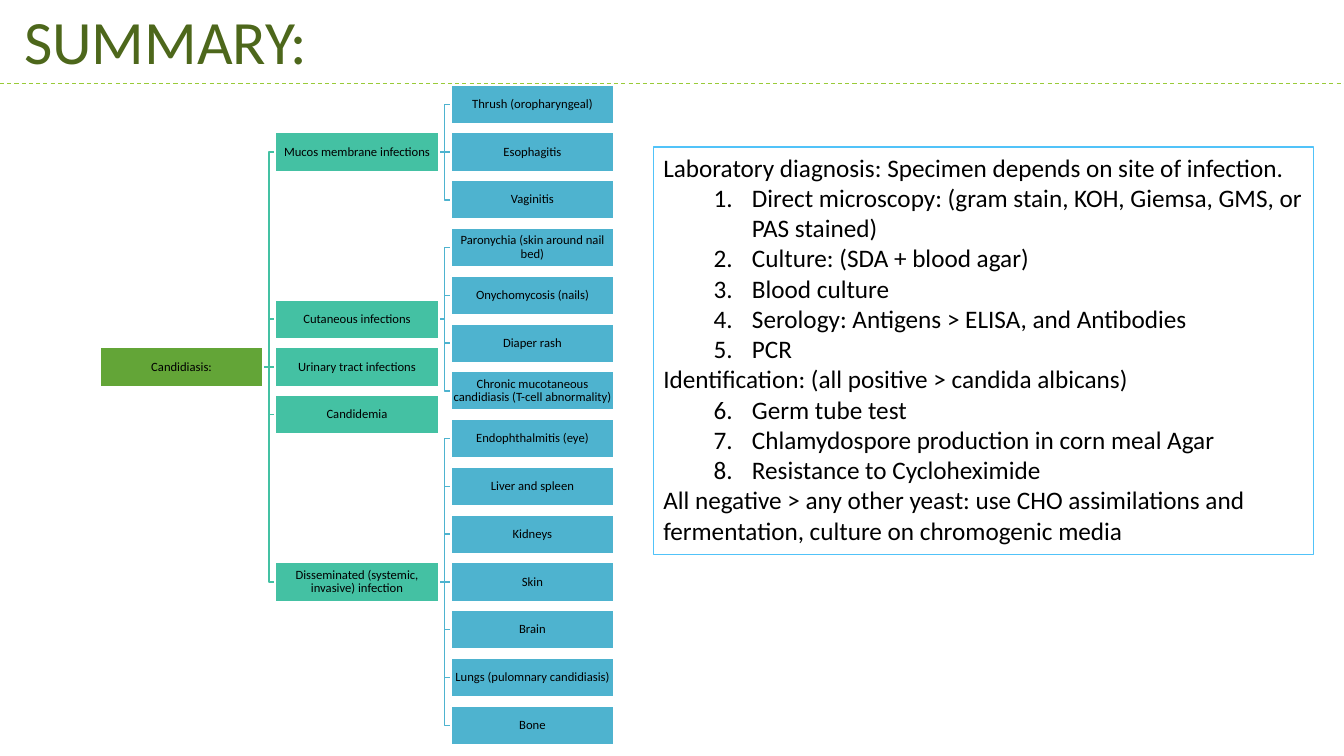
from lxml.etree import SubElement
from pptx import Presentation
from pptx.dml.color import RGBColor
from pptx.enum.dml import MSO_LINE
from pptx.enum.shapes import MSO_CONNECTOR as Connector, MSO_SHAPE as Shape
from pptx.enum.text import MSO_ANCHOR as Anchor, MSO_AUTO_SIZE as AutoSize, PP_ALIGN as Align
from pptx.oxml.ns import qn
from pptx.util import Inches, Pt

BLACK = RGBColor(0x00, 0x00, 0x00)
WHITE = RGBColor(0xFF, 0xFF, 0xFF)
DARK_GREEN = RGBColor(0x4D, 0x67, 0x1B)
LIME = RGBColor(0x99, 0xCB, 0x38)
GREEN = RGBColor(0x63, 0xA5, 0x37)
TEAL = RGBColor(0x44, 0xC1, 0xA3)
BLUE = RGBColor(0x4E, 0xB3, 0xCF)
SKY = RGBColor(0x51, 0xC3, 0xF9)

COLUMN_LEFT, COLUMN_STEP = 0.99, 1.74
ROW_TOP, ROW_STEP = 0.84, 6.16 / 13
NODE_WIDTH, NODE_HEIGHT = 1.62, 0.39

ROOT_ROW = 5.5
BRANCHES = [
    ("Mucos membrane infections", 1, 0,
     ["Thrush (oropharyngeal)", "Esophagitis", "Vaginitis"]),
    ("Cutaneous infections", 4.5, 3,
     ["Paronychia (skin around nail bed)", "Onychomycosis (nails)", "Diaper rash",
      "Chronic mucotaneous candidiasis (T-cell abnormality)"]),
    ("Urinary tract infections", 5.5, 0, []),
    ("Candidemia", 6.5, 0, []),
    ("Disseminated (systemic, invasive) infection", 10, 7,
     ["Endophthalmitis (eye)", "Liver and spleen", "Kidneys", "Skin", "Brain",
      "Lungs (pulomnary candidiasis)", "Bone"]),
]

DIAGNOSIS = [
    ("Laboratory diagnosis: Specimen depends on site of infection.",
     ["Direct microscopy: (gram stain, KOH, Giemsa, GMS, or PAS stained)",
      "Culture: (SDA + blood agar)", "Blood culture",
      "Serology: Antigens > ELISA, and Antibodies", "PCR"]),
    ("Identification: (all positive > candida albicans)",
     ["Germ tube test", "Chlamydospore production in corn meal Agar",
      "Resistance to Cycloheximide"]),
    ("All negative > any other yeast: use CHO assimilations and fermentation, "
     "culture on chromogenic media", []),
]


class SummaryPage:
    """Holds the text style and the slide being built."""

    def __init__(self, deck, font_name="Calibri"):
        self.page = deck.slides.add_slide(deck.slide_layouts[5])
        self.shapes = self.page.shapes
        self.font_name = font_name

    def style(self, para, size, color):
        for span in para.runs:
            span.font.name = self.font_name
            span.font.size = Pt(size)
            span.font.color.rgb = color

    def title(self, text):
        box = self.shapes.title
        box.left, box.top = Inches(0.14), Inches(0.05)
        box.width, box.height = Inches(11.5), Inches(0.79)
        frame = box.text_frame
        frame.text = text
        frame.vertical_anchor = Anchor.MIDDLE
        frame.auto_size = AutoSize.NONE
        para = frame.paragraphs[0]
        para.alignment = Align.LEFT
        para.line_spacing = 0.9
        self.style(para, 44, DARK_GREEN)

    def line(self, kind, start, end, color, width):
        line = self.shapes.add_connector(kind, *map(Inches, start + end))
        SubElement(line._element.spPr, qn("a:effectLst"))
        line.line.color.rgb = color
        line.line.width = Pt(width)
        return line

    def rectangle(self, left, top, width, height, fill, outline, weight):
        box = self.shapes.add_shape(Shape.RECTANGLE, *map(Inches, (left, top, width, height)))
        box.shadow.inherit = False
        box.fill.solid()
        box.fill.fore_color.rgb = fill
        box.line.color.rgb = outline
        box.line.width = Pt(weight)
        box.text_frame.word_wrap = True
        return box

    def node(self, text, column, row, fill):
        box = self.rectangle(COLUMN_LEFT + column * COLUMN_STEP, ROW_TOP + row * ROW_STEP,
                             NODE_WIDTH, NODE_HEIGHT, fill, WHITE, 1.5)
        frame = box.text_frame
        frame.margin_left = frame.margin_right = Inches(0.01)
        frame.margin_top = frame.margin_bottom = Inches(0.01)
        frame.vertical_anchor = Anchor.MIDDLE
        frame.text = text
        para = frame.paragraphs[0]
        para.alignment = Align.CENTER
        para.line_spacing = 0.9
        self.style(para, 9, BLACK)
        return box

    def link(self, parent, child, color):
        kind = Connector.STRAIGHT if parent.top == child.top else Connector.ELBOW
        link = self.line(kind, (0, 0), (0, 0), color, 1)
        link.begin_connect(parent, 3)
        link.end_connect(child, 1)
        self.shapes._spTree.insert(3, link._element)

    def tree(self):
        root = self.node("Candidiasis:", 0, ROOT_ROW, GREEN)
        for name, row, first_row, leaves in BRANCHES:
            branch = self.node(name, 1, row, TEAL)
            self.link(root, branch, TEAL)
            for leaf_row, leaf_name in enumerate(leaves, first_row):
                self.link(branch, self.node(leaf_name, 2, leaf_row, BLUE), BLUE)

    def number(self, para):
        para.level = 1
        properties = para._p.get_or_add_pPr()
        properties.set("marL", str(Inches(0.88)))
        properties.set("indent", str(Inches(-0.38)))
        SubElement(properties, qn("a:buFont"), typeface="+mj-lt")
        SubElement(properties, qn("a:buAutoNum"), type="arabicPeriod")

    def panel(self, sections):
        frame = self.rectangle(6.48, 1.46, 6.55, 4.04, WHITE, SKY, 1).text_frame
        frame.vertical_anchor = Anchor.TOP
        frame.auto_size = AutoSize.SHAPE_TO_FIT_TEXT
        entries = [(text, text is not heading)
                   for heading, items in sections for text in [heading, *items]]
        frame.text = "\n".join(text for text, _ in entries)
        for para, (_, numbered) in zip(frame.paragraphs, entries):
            para.alignment = Align.LEFT
            if numbered:
                self.number(para)
            self.style(para, 18, BLACK)


def main():
    deck = Presentation()
    deck.slide_width, deck.slide_height = Inches(13.33), Inches(7.5)
    summary = SummaryPage(deck)
    summary.title("SUMMARY:")
    divider = summary.line(Connector.STRAIGHT, (0, 0.83), (13.33, 0.83), LIME, 0.75)
    divider.line.dash_style = MSO_LINE.DASH
    summary.tree()
    summary.panel(DIAGNOSIS)
    deck.save("out.pptx")


if __name__ == "__main__":
    main()
